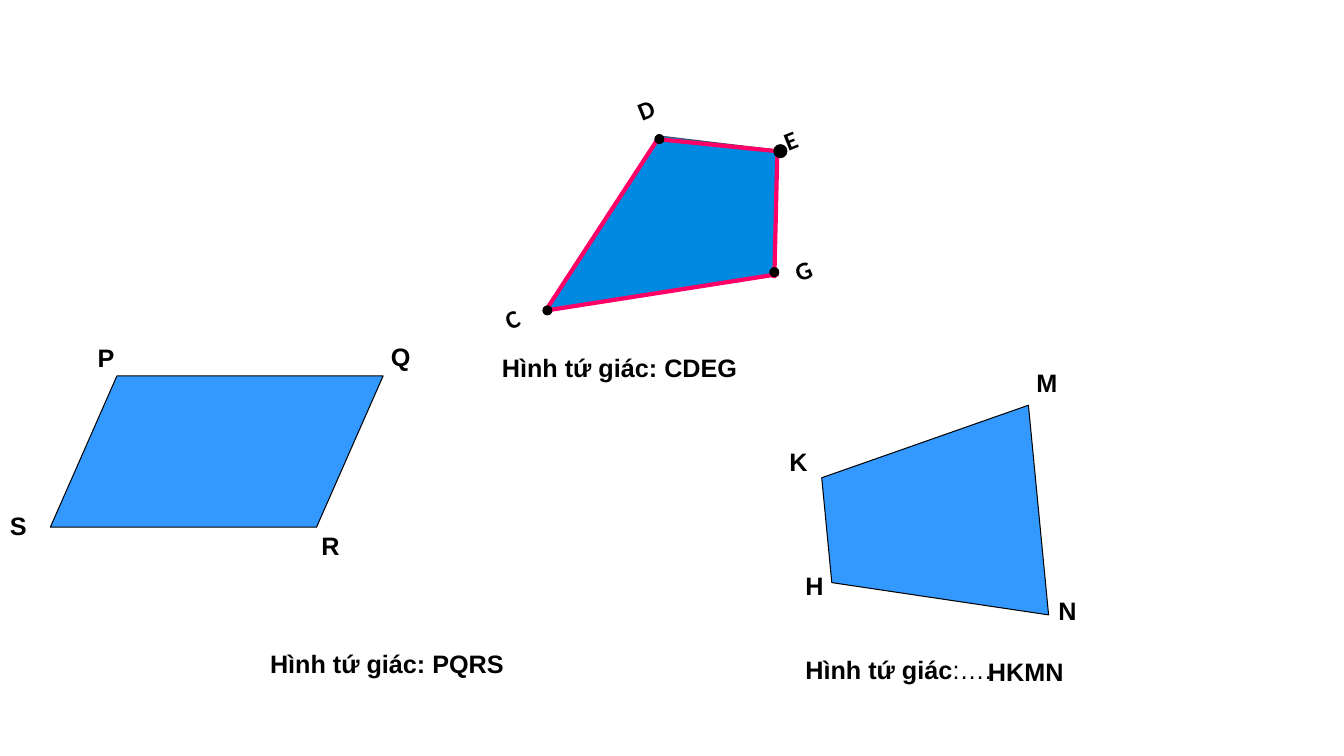
"""Draw three named quadrilaterals with corner labels and captions."""
from dataclasses import dataclass

from lxml.etree import SubElement
from pptx import Presentation
from pptx.dml.color import RGBColor as Rgb
from pptx.enum.shapes import MSO_CONNECTOR as Link, MSO_SHAPE as Kind
from pptx.enum.text import MSO_AUTO_SIZE as Fit
from pptx.oxml.ns import qn
from pptx.util import Pt

SCALE = 9144
SIZE = (1333, 750)
HIGH = 40
TILT = 338.2

CAPTIONS = [
    (488, 345, 322, [("Hình tứ giác: CDEG", True)]),
    (258, 638, 316, [("Hình tứ giác: PQRS", True)]),
    (789, 644, 241, [("Hình tứ giác", True), (":….", False)]),
    (970, 646, 117, [("HKMN", True)]),
]
PQRS = [("P", 87, 335, 105), ("Q", 378, 334, 97), ("R", 309, 521, 107), ("S", 0, 501, 84)]
HKMN = [("K", 773, 438, 60), ("M", 1018, 359, 62), ("N", 1040, 586, 70), ("H", 789, 561, 45)]
CDEG = [("D", 623, 89, 33), ("E", 768, 119, 31), ("G", 779, 249, 31), ("C", 491, 294, 44)]
SLANT = (50, 373, 330, 150)
TRAPEZE = [(1020, 402), (815, 474), (825, 578), (1040, 610)]
KITE = [(769, 273), (542, 308), (655, 135), (771, 149)]
EDGES = [
    (540, 310, 655, 134),
    (652, 138, 771, 150),
    (771, 149, 768, 276),
    (542, 308, 772, 272),
]
DOTS = [(649, 133, 10), (767, 143, 14), (538, 303, 10), (763, 265, 10)]


@dataclass(frozen=True)
class Theme:
    ink: str = "000000"
    sky: str = "3399FF"
    blue: str = "0089E1"
    slate: str = "44546A"
    pink: str = "FF0066"
    sans: str = "Arial"
    round: str = "Calibri"
    text: int = 18
    thin: float = 0.75
    thick: int = 3


LOOK = Theme()


def emu(*px):
    return [n * SCALE for n in px]


def paint(shape, fill, line=None):
    shape.shadow.inherit = False
    shape.fill.solid()
    shape.fill.fore_color.rgb = Rgb.from_string(fill)
    if line:
        shape.line.color.rgb = Rgb.from_string(line)
        shape.line.width = Pt(LOOK.thin)
    else:
        shape.line.fill.background()


def write(slide, left, top, wide, runs, font=LOOK.sans, turn=0):
    box = slide.shapes.add_textbox(*emu(left, top, wide, HIGH))
    box.rotation = turn
    frame = box.text_frame
    frame.word_wrap = True
    frame.auto_size = Fit.SHAPE_TO_FIT_TEXT
    for words, bold in runs:
        run = frame.paragraphs[0].add_run()
        run.text = words
        run.font.name = font
        run.font.size = Pt(LOOK.text)
        run.font.bold = bold
        run.font.color.rgb = Rgb.from_string(LOOK.ink)


def label(slide, marks, font=LOOK.sans, turn=0):
    for mark, left, top, wide in marks:
        write(slide, left, top, wide, [(mark, True)], font, turn)


def outline(slide, points, fill, line):
    pen = slide.shapes.build_freeform(*points[0], scale=SCALE)
    pen.add_line_segments(points[1:], close=True)
    paint(pen.convert_to_shape(), fill, line)


def edge(slide, ends):
    line = slide.shapes.add_connector(Link.STRAIGHT, *emu(*ends))
    line.line.color.rgb = Rgb.from_string(LOOK.pink)
    line.line.width = Pt(LOOK.thick)
    SubElement(line._element.spPr, qn("a:effectLst"))


def main():
    deck = Presentation()
    deck.slide_width, deck.slide_height = emu(*SIZE)
    slide = deck.slides.add_slide(deck.slide_layouts[6])
    for caption in CAPTIONS:
        write(slide, *caption)
    label(slide, PQRS)
    paint(slide.shapes.add_shape(Kind.FLOWCHART_DATA, *emu(*SLANT)), LOOK.sky, LOOK.ink)
    label(slide, HKMN)
    outline(slide, TRAPEZE, LOOK.sky, LOOK.ink)
    outline(slide, KITE, LOOK.blue, LOOK.slate)
    label(slide, CDEG, LOOK.round, TILT)
    for ends in EDGES:
        edge(slide, ends)
    for left, top, wide in DOTS:
        paint(slide.shapes.add_shape(Kind.OVAL, *emu(left, top, wide, wide)), LOOK.ink)
    deck.save("out.pptx")


if __name__ == "__main__":
    main()
